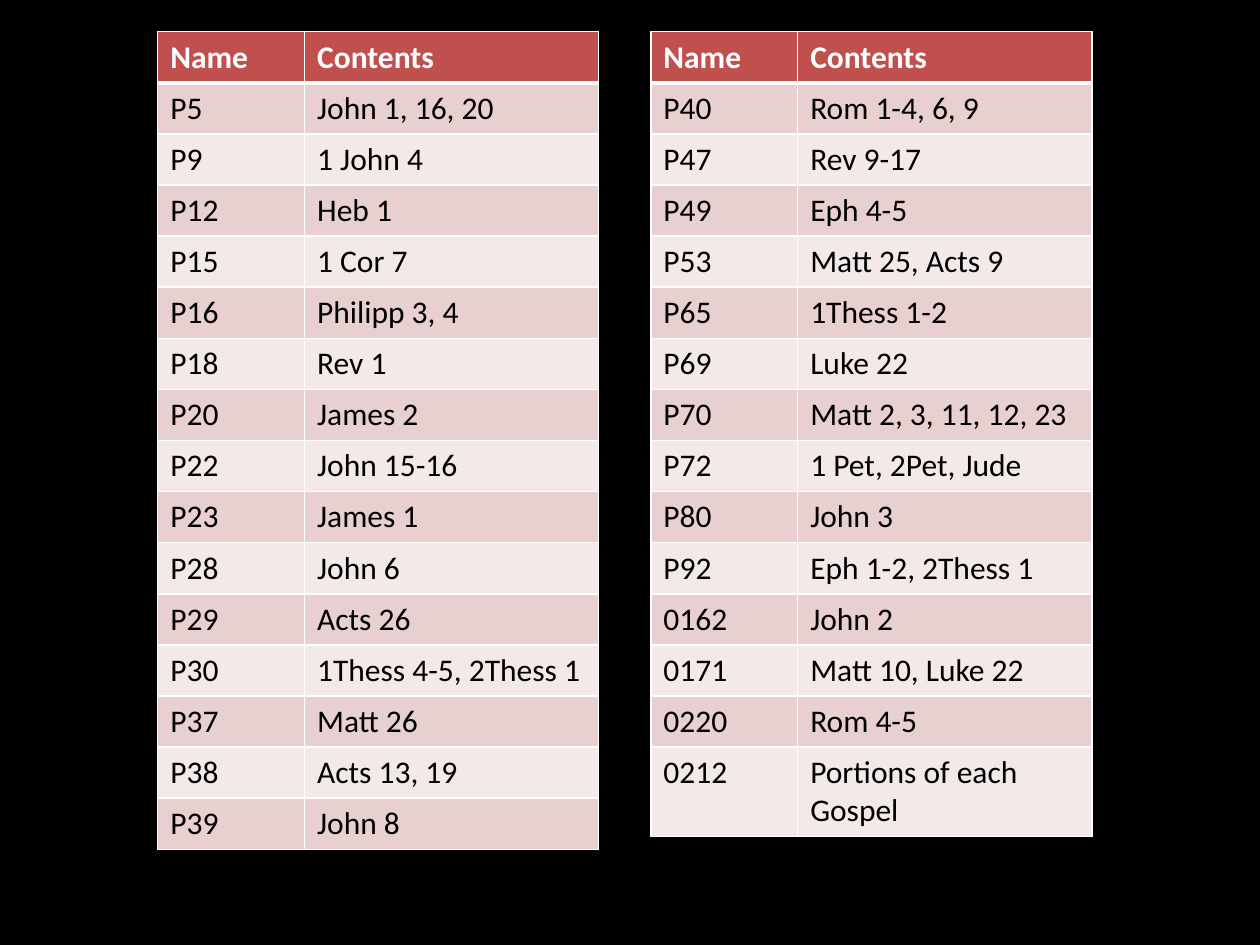
import pptx
import pptx.util
import pptx.dml.color
import lxml.etree
import pptx.oxml.ns

Cm = pptx.util.Cm
Pt = pptx.util.Pt
RGBColor = pptx.dml.color.RGBColor

BLACK = RGBColor(0x00, 0x00, 0x00)
WHITE = RGBColor(0xFF, 0xFF, 0xFF)
RED = RGBColor(0xC0, 0x50, 0x4D)
ROSE = RGBColor(0xE8, 0xD0, 0xD0)
PALE = RGBColor(0xF4, 0xE9, 0xE9)

FONT = "Calibri"
TOP = Cm(0.64)
COLUMN_WIDTHS = (Cm(2.96), Cm(5.93))
ROW_HEIGHT = Cm(1.03)
HEADER = ("Name", "Contents")

LEFT_ROWS = [
    ("P5", "John 1, 16, 20"),
    ("P9", "1 John 4"),
    ("P12", "Heb 1"),
    ("P15", "1 Cor 7"),
    ("P16", "Philipp 3, 4"),
    ("P18", "Rev 1"),
    ("P20", "James 2"),
    ("P22", "John 15-16"),
    ("P23", "James 1"),
    ("P28", "John 6"),
    ("P29", "Acts 26"),
    ("P30", "1Thess 4-5, 2Thess 1"),
    ("P37", "Matt 26"),
    ("P38", "Acts 13, 19"),
    ("P39", "John 8"),
]
RIGHT_ROWS = [
    ("P40", "Rom 1-4, 6, 9"),
    ("P47", "Rev 9-17"),
    ("P49", "Eph 4-5"),
    ("P53", "Matt 25, Acts 9"),
    ("P65", "1Thess 1-2"),
    ("P69", "Luke 22"),
    ("P70", "Matt 2, 3, 11, 12, 23"),
    ("P72", "1 Pet, 2Pet, Jude"),
    ("P80", "John 3"),
    ("P92", "Eph 1-2, 2Thess 1"),
    ("0162", "John 2"),
    ("0171", "Matt 10, Luke 22"),
    ("0220", "Rom 4-5"),
    ("0212", "Portions of each Gospel"),
]


def write_text(tf, text, size=18, color=BLACK, bold=False):
    r = tf.paragraphs[0].add_run()
    r.text = text
    r.font.name = FONT
    r.font.size = Pt(size)
    r.font.bold = bold
    r.font.color.rgb = color


def set_borders(cell, color=WHITE, top=1, bottom=1):
    qn = pptx.oxml.ns.qn
    tcPr = cell._tc.get_or_add_tcPr()
    for side, width in (("L", 1), ("R", 1), ("T", top), ("B", bottom)):
        ln = lxml.etree.SubElement(tcPr, qn(f"a:ln{side}"), w=str(Pt(width)))
        fill = lxml.etree.SubElement(ln, qn("a:solidFill"))
        lxml.etree.SubElement(fill, qn("a:srgbClr"), val=str(color))


def fill_cell(cell, color):
    cell.fill.solid()
    cell.fill.fore_color.rgb = color


def add_contents_table(s, left, entries):
    rows = [HEADER, *entries]
    height = ROW_HEIGHT * len(rows)
    table = s.shapes.add_table(
        len(rows), len(HEADER), left, TOP, sum(COLUMN_WIDTHS), height
    ).table
    for column, width in zip(table.columns, COLUMN_WIDTHS):
        column.width = width
    for i, values in enumerate(rows):
        table.rows[i].height = ROW_HEIGHT
        for j, text in enumerate(values):
            cell = table.cell(i, j)
            is_header = i == 0
            set_borders(cell, top=3 if i == 1 else 1, bottom=3 if is_header else 1)
            fill_cell(cell, RED if is_header else ROSE if i % 2 else PALE)
            write_text(
                cell.text_frame,
                text,
                color=WHITE if is_header else BLACK,
                bold=is_header,
            )
    return table


def main():
    prs = pptx.Presentation()
    prs.slide_width = Cm(25.4)
    prs.slide_height = Cm(19.05)
    s = prs.slides.add_slide(prs.slide_layouts[6])
    s.background.fill.solid()
    s.background.fill.fore_color.rgb = BLACK
    add_contents_table(s, Cm(3.18), LEFT_ROWS)
    right_table = add_contents_table(s, Cm(13.12), RIGHT_ROWS)
    right_table.rows[len(RIGHT_ROWS)].height = Cm(1.79)
    prs.save("out.pptx")


if __name__ == "__main__":
    main()
